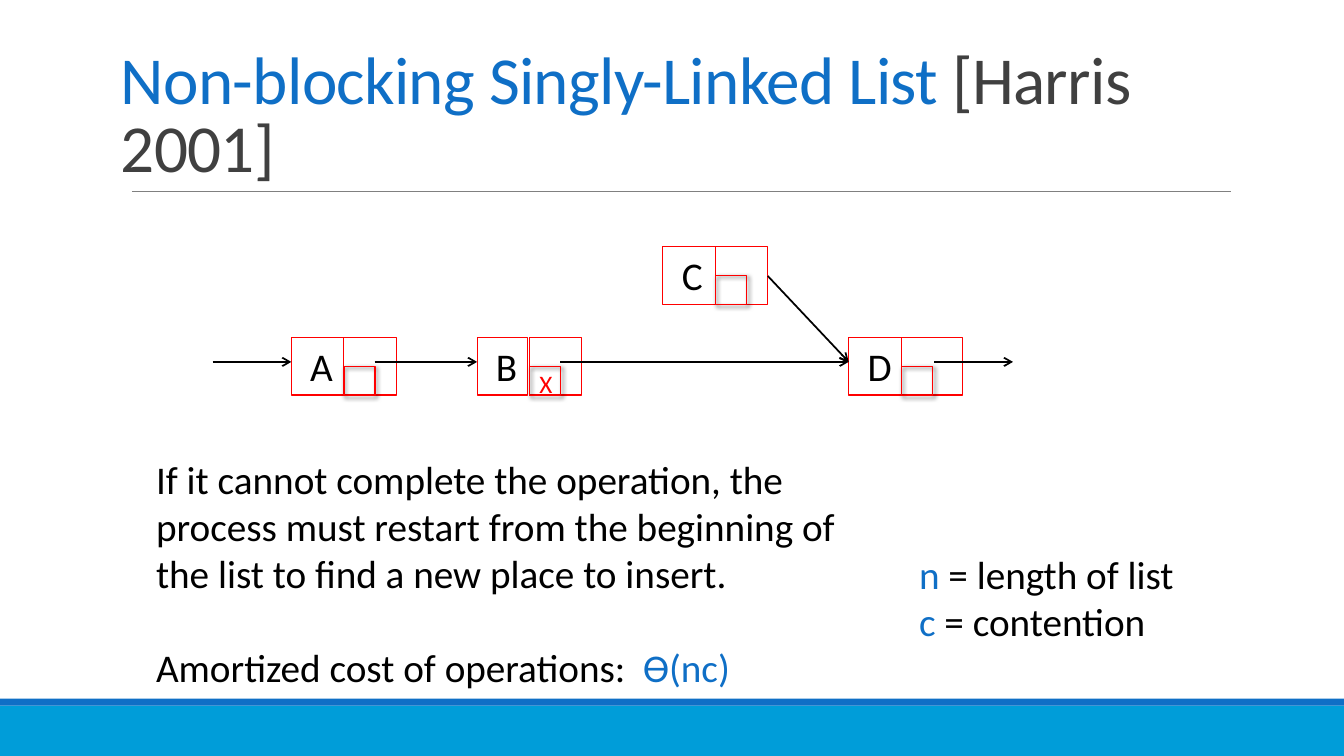
from lxml import etree
from pptx import Presentation
from pptx import util as u
from pptx.dml.color import RGBColor
from pptx.enum import shapes, text
from pptx.oxml import ns

COLORS = {
    "blue": "0F6FC6", "cyan": "009DD9", "gray": "808080", "dark": "404040",
    "black": "000000", "red": "FF0000",
}
FONT = "Calibri"
NODE_HEIGHT = 41
ARROW_DROP = 17.3  # from the top of a node to its arrows
MARK_WIDTH, MARK_HEIGHT = 22.3, 20.9


def rgb(name):
    return RGBColor.from_string(COLORS[name])


def add_box(slide, box, fill=None, line=None, width=0.75):
    shape = slide.shapes.add_shape(shapes.MSO_SHAPE.RECTANGLE, *map(u.Pt, box))
    shape.shadow.inherit = False
    if fill:
        shape.fill.solid()
        shape.fill.fore_color.rgb = rgb(fill)
    else:
        shape.fill.background()
    if line:
        shape.line.color.rgb = rgb(line)
        shape.line.width = u.Pt(width)
    else:
        shape.line.fill.background()
    return shape


def add_line(slide, start, end, color="black", width=1.25, arrow=True):
    line = slide.shapes.add_connector(
        shapes.MSO_CONNECTOR.STRAIGHT, *map(u.Pt, (*start, *end)))
    line.line.color.rgb = rgb(color)
    line.line.width = u.Pt(width)
    if arrow:
        etree.SubElement(line.line._get_or_add_ln(), ns.qn("a:tailEnd"), type="arrow")
    etree.SubElement(line._element.spPr, ns.qn("a:effectLst"))


def write_runs(paragraph, runs, size):
    for content, color in runs:
        run = paragraph.add_run()
        run.text = content
        run.font.name = FONT
        run.font.size = u.Pt(size)
        run.font.color.rgb = rgb(color)


def add_text(slide, box, paragraphs, size=28, wrap=True, gap=0):
    frame = slide.shapes.add_textbox(*map(u.Pt, box)).text_frame
    frame.word_wrap = wrap
    for index, runs in enumerate(paragraphs):
        paragraph = frame.add_paragraph() if index else frame.paragraphs[0]
        if index and gap:
            paragraph.space_before = u.Pt(gap)
        write_runs(paragraph, runs, size)


def add_title(slide, box, runs):
    title = slide.shapes.title
    title.left, title.top, title.width, title.height = map(u.Pt, box)
    frame = title.text_frame
    frame.word_wrap = True
    frame.auto_size = text.MSO_AUTO_SIZE.NONE
    frame.vertical_anchor = text.MSO_ANCHOR.BOTTOM
    paragraph = frame.paragraphs[0]
    paragraph.alignment = text.PP_ALIGN.LEFT
    paragraph.line_spacing = 0.85
    write_runs(paragraph, runs, 48)
    for run in paragraph.runs:
        run.font._element.set("spc", "-50")


def add_mark(slide, box):
    """Small shadowed square that holds the deletion bit."""
    effects = add_box(slide, box, line="red", width=1)._element.spPr.find(
        ns.qn("a:effectLst"))
    shadow = etree.SubElement(
        effects, ns.qn("a:outerShdw"), blurRad=str(u.Pt(3)), dist=str(u.Pt(2)),
        dir=str(45 * 60000), algn="tl", rotWithShape="0")
    color = etree.SubElement(shadow, ns.qn("a:srgbClr"), val=COLORS["black"])
    etree.SubElement(color, ns.qn("a:alpha"), val="60000")


def add_node(slide, left, top, label, value_width, pointer_left, pointer_width):
    """Value cell, pointer cell and mark of one list node."""
    cell = add_box(slide, (left, top, value_width, NODE_HEIGHT), line="red")
    frame = cell.text_frame
    frame.word_wrap = False
    frame.vertical_anchor = text.MSO_ANCHOR.TOP
    frame.margin_left, frame.margin_right = u.Pt(13.5), 0
    frame.paragraphs[0].alignment = text.PP_ALIGN.LEFT
    write_runs(frame.paragraphs[0], [(label, "black")], 28)
    pointer = left + pointer_left
    add_box(slide, (pointer, top, pointer_width, NODE_HEIGHT), line="red")
    add_mark(slide, (pointer, top + 20.5, MARK_WIDTH, MARK_HEIGHT))


def add_list_diagram(slide, box):
    left, top, width, height = box
    pitch = 132.7
    row = top + height - NODE_HEIGHT
    node_a, node_b, node_c, node_d = (left + 56.3 + pitch * i for i in range(4))
    nodes = [
        (node_a, row, "A", 37.5, 37.5, 37.5),
        (node_b, row, "B", 36, 37.3, 37.5),
        (node_c, top, "C", 37.5, 37.5, 37.5),
        (node_d, row, "D", 38, 37.7, 43.7),
    ]
    for node in nodes:
        add_node(slide, *node)

    # Arrows between the nodes
    level = row + ARROW_DROP
    for start, end in [(left, node_a), (node_a + 59.5, node_b),
                       (node_b + 59.5, node_d), (node_d + 61, left + width)]:
        add_line(slide, (start, level), (end, level))
    add_line(slide, (node_c + 75, top + 20.9), (node_d, level))

    # Node B is marked as deleted
    add_text(slide, (node_b + 37.3, row + 18, 24, 28.8), [[("X", "red")]],
             size=18, wrap=False)


def add_footer_band(slide, box):
    left, top, width, height = box
    add_box(slide, (left, top + 5, width, height - 5), fill="cyan")
    add_box(slide, (left, top, width, 5), fill="blue")


def main():
    presentation = Presentation()
    presentation.slide_width, presentation.slide_height = u.Pt(960), u.Pt(540)
    slide = presentation.slides.add_slide(presentation.slide_layouts[5])

    # Frame and title
    add_footer_band(slide, (0, 499, 960, 41))
    add_line(slide, (94.3, 136.8), (879, 136.8), "gray", 0.5, arrow=False)
    add_title(slide, (79.2, 22.5, 846, 114.3), [
        ("Non-blocking Singly-Linked List ", "blue"), ("[Harris 2001]", "dark")])

    add_list_diagram(slide, (151.8, 176.3, 571.8, 105.9))

    # Explanation and legend
    add_text(slide, (104.4, 321.8, 530, 177), [
        [("If it cannot complete the operation, the process must restart from "
          "the beginning of the list to find a new place to insert.", "black")],
        [("Amortized cost of operations:  ", "black"), ("Ɵ(nc)", "blue")],
    ], gap=33.6)
    add_text(slide, (649.4, 389.5, 217.5, 75), [
        [("n", "blue"), (" = length of list", "black")],
        [("c", "blue"), (" = contention", "black")],
    ])
    presentation.save("out.pptx")


if __name__ == "__main__":
    main()
